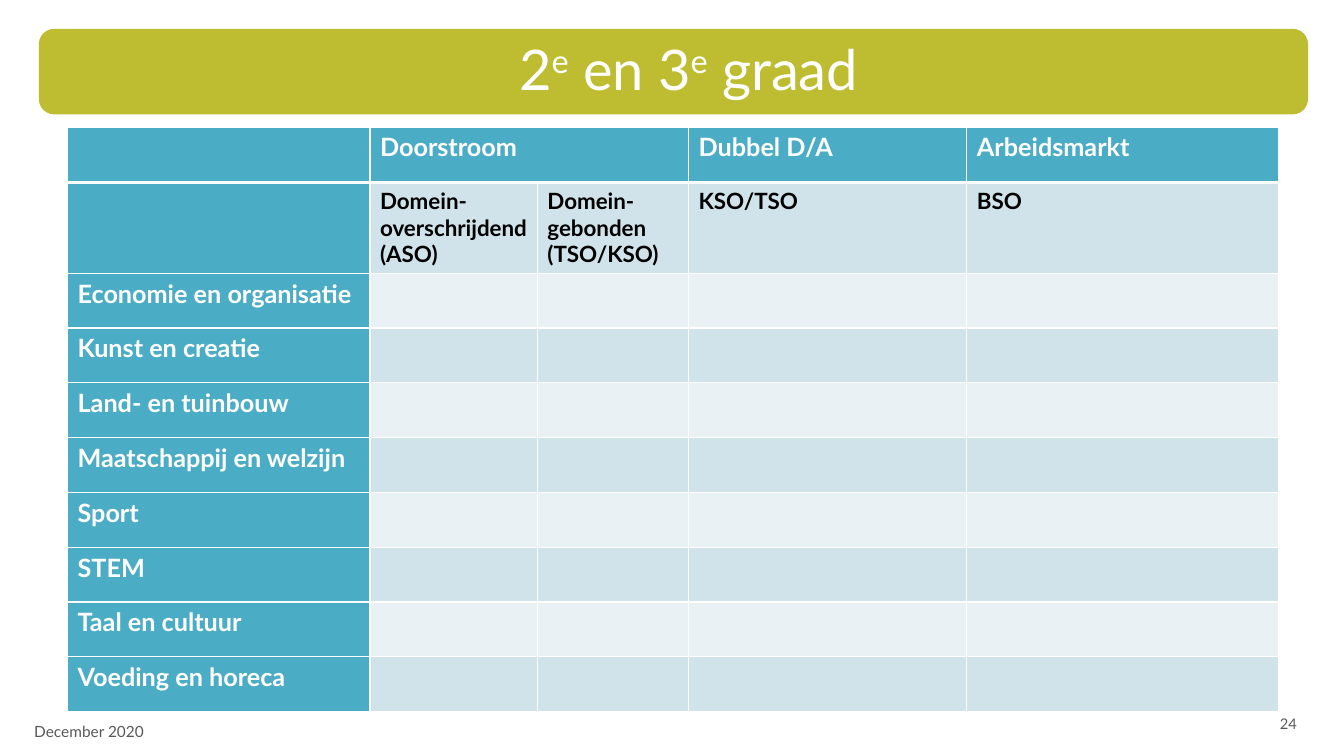
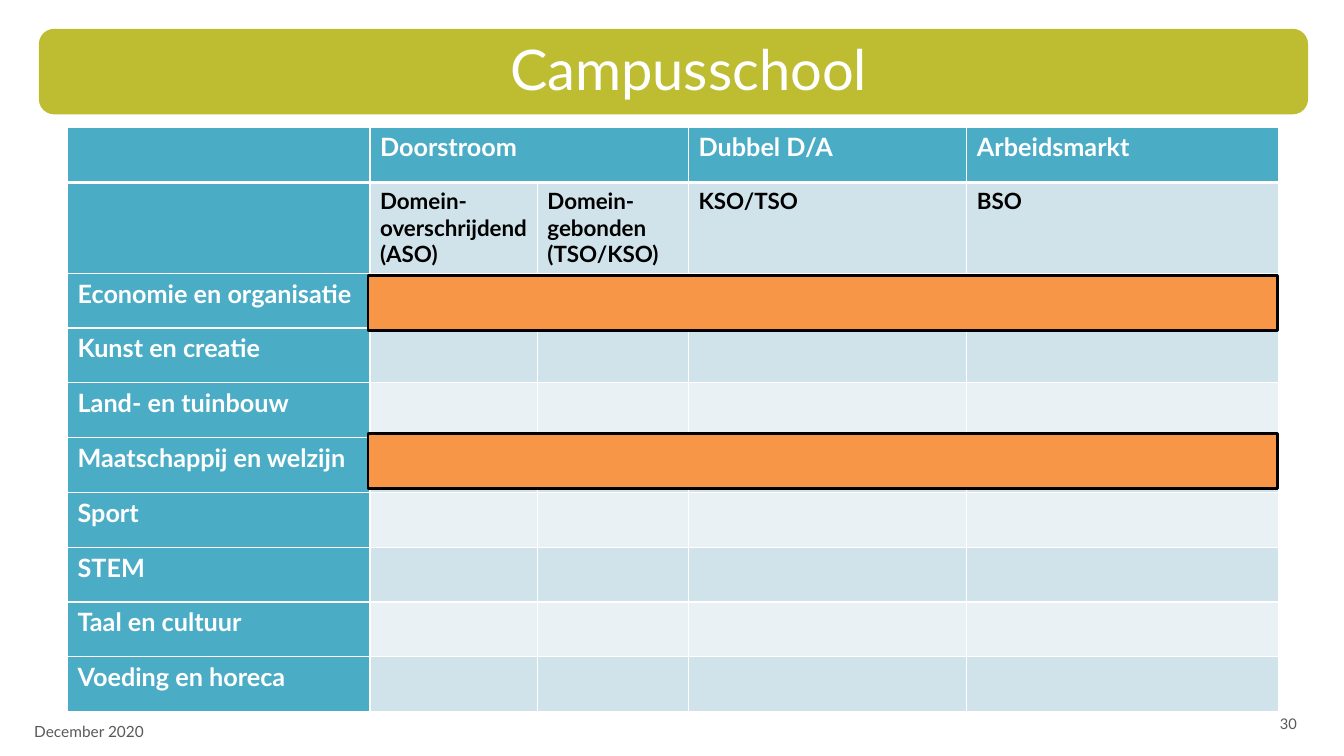
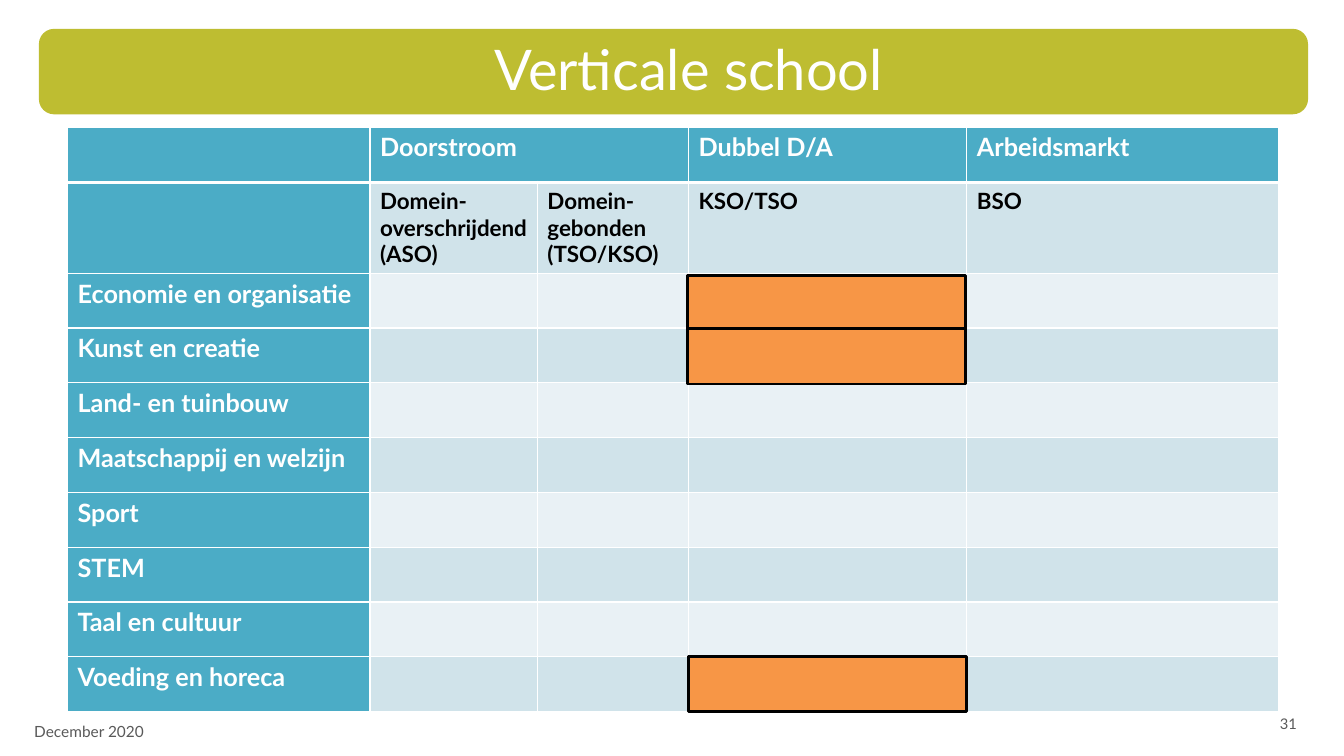
from lxml import etree
from pptx import Presentation
from pptx.dml.color import RGBColor
from pptx.enum import shapes, text
from pptx.oxml.ns import qn
from pptx.util import Inches, Pt

FONT = "Lato"
WHITE, BLACK, GREY = "FFFFFF", "000000", "595959"
OLIVE, TEAL, ORANGE = "BEBD31", "4BACC6", "F79646"
STRIPES = ("E9F1F5", "D0E3EA")

# Text between bars in a title is raised; each mark is left, top, width in inches.
PAGES = [
    {"title": "2|e| en 3|e| graad", "number": "24", "marks": []},
    {"title": "Campusschool", "number": "30",
     "marks": [(3.65, 2.73, 9.02), (3.65, 4.3, 9.02)]},
    {"title": "Verticale school", "number": "31",
     "marks": [(6.82, 2.73, 2.76), (6.82, 3.26, 2.76), (6.83, 6.51, 2.76)]},
]
MARK_HEIGHT = 0.55
DATE = "December 2020"

FINALITIES = ["", "Doorstroom", "", "Dubbel D/A", "Arbeidsmarkt"]
FORMS = ["", "Domein-overschrijdend (ASO)", "Domein-gebonden (TSO/KSO)", "KSO/TSO", "BSO"]
DOMAINS = ["Economie en organisatie", "Kunst en creatie", "Land- en tuinbouw",
           "Maatschappij en welzijn", "Sport", "STEM", "Taal en cultuur",
           "Voeding en horeca"]
GRID = [FINALITIES, FORMS] + [[domain, "", "", "", ""] for domain in DOMAINS]
COLUMN_WIDTHS = [3, 1.66, 1.5, 2.76, 3.09]
DOMAIN_ROWS_HEIGHT = 4.35
ROW_HEIGHTS = [0.55, 0.89] + [DOMAIN_ROWS_HEIGHT / len(DOMAINS)] * len(DOMAINS)


def color(value):
    return RGBColor.from_string(value)


def style_font(font, size, value, bold=False):
    font.name, font.size, font.bold = FONT, Pt(size), bold
    font.color.rgb = color(value)


def add_block(page, kind, place, fill, line):
    block = page.shapes.add_shape(kind, *map(Inches, place))
    block.shadow.inherit = False
    block.fill.solid()
    block.fill.fore_color.rgb = color(fill)
    block.line.color.rgb = color(line)
    block.line.width = Pt(2)
    return block


def add_label(page, words, place, size, align):
    box = page.shapes.add_textbox(*map(Inches, place))
    frame = box.text_frame
    frame.word_wrap = True
    frame.vertical_anchor = text.MSO_ANCHOR.MIDDLE
    frame.text = words
    frame.paragraphs[0].alignment = align
    style_font(frame.paragraphs[0].runs[0].font, size, GREY)


def set_title(page, marked):
    frame = page.shapes.title.text_frame
    frame.auto_size = text.MSO_AUTO_SIZE.NONE
    frame.vertical_anchor = text.MSO_ANCHOR.TOP
    para = frame.paragraphs[0]
    para.alignment = text.PP_ALIGN.CENTER
    for index, part in enumerate(marked.split("|")):
        span = para.add_run()
        span.text = part
        style_font(span.font, 40, WHITE)
        if index % 2:
            span._r.get_or_add_rPr().set("baseline", "30000")


def set_borders(cell, top, bottom):
    """Draw white cell borders, with top and bottom widths in points."""
    properties = cell._tc.get_or_add_tcPr()
    for side, width in (("L", 1), ("R", 1), ("T", top), ("B", bottom)):
        line = etree.SubElement(properties, qn(f"a:ln{side}"), w=str(Pt(width)))
        fill = etree.SubElement(line, qn("a:solidFill"))
        etree.SubElement(fill, qn("a:srgbClr"), val=WHITE)


def add_domain_table(page):
    place = (0.67, 1.26, sum(COLUMN_WIDTHS), sum(ROW_HEIGHTS))
    table = page.shapes.add_table(len(GRID), len(COLUMN_WIDTHS), *map(Inches, place)).table
    for column, width in zip(table.columns, COLUMN_WIDTHS):
        column.width = Inches(width)
    for row, height in zip(table.rows, ROW_HEIGHTS):
        row.height = Inches(height)
    for r, words in enumerate(GRID):
        for c, word in enumerate(words):
            cell = table.cell(r, c)
            heading = r == 0 or c == 0
            set_borders(cell, 3 if r == 1 else 1, 3 if r == 0 else 1)
            cell.fill.solid()
            cell.fill.fore_color.rgb = color(TEAL if heading else STRIPES[r % 2])
            if word:
                cell.text_frame.text = word
                style_font(cell.text_frame.paragraphs[0].runs[0].font,
                           18 if heading else 16, WHITE if heading else BLACK, True)
    table.cell(0, 1).merge(table.cell(0, 2))


def prepare_layout(deck):
    """Give the title-only layout its title place and olive band."""
    layout = deck.slide_layouts.get_by_name("Title Only")
    title = layout.placeholders[0]
    title.left, title.top, title.width, title.height = map(Inches, (0.83, 0.29, 12, 0.69))
    return layout


def add_layout_band(layout, page):
    """Shapes can only be made on a slide, so the band is made there and moved."""
    band = add_block(page, shapes.MSO_SHAPE.ROUNDED_RECTANGLE,
                     (0.4, 0.3, 12.56, 0.82), OLIVE, OLIVE)
    layout.shapes.element.insert(2, band.element)


def main():
    deck = Presentation()
    deck.slide_width, deck.slide_height = Inches(13.33), Inches(7.5)
    layout = prepare_layout(deck)
    for index, content in enumerate(PAGES):
        page = deck.slides.add_slide(layout)
        if index == 0:
            add_layout_band(layout, page)
        set_title(page, content["title"])
        add_label(page, content["number"], (9.88, 6.98, 3.08, 0.4), 10.5,
                  text.PP_ALIGN.RIGHT)
        add_domain_table(page)
        for left, top, width in content["marks"]:
            add_block(page, shapes.MSO_SHAPE.RECTANGLE,
                      (left, top, width, MARK_HEIGHT), ORANGE, BLACK)
        add_label(page, DATE, (0.24, 7.06, 3.41, 0.4), 11, text.PP_ALIGN.LEFT)
    deck.save("out.pptx")


if __name__ == "__main__":
    main()
